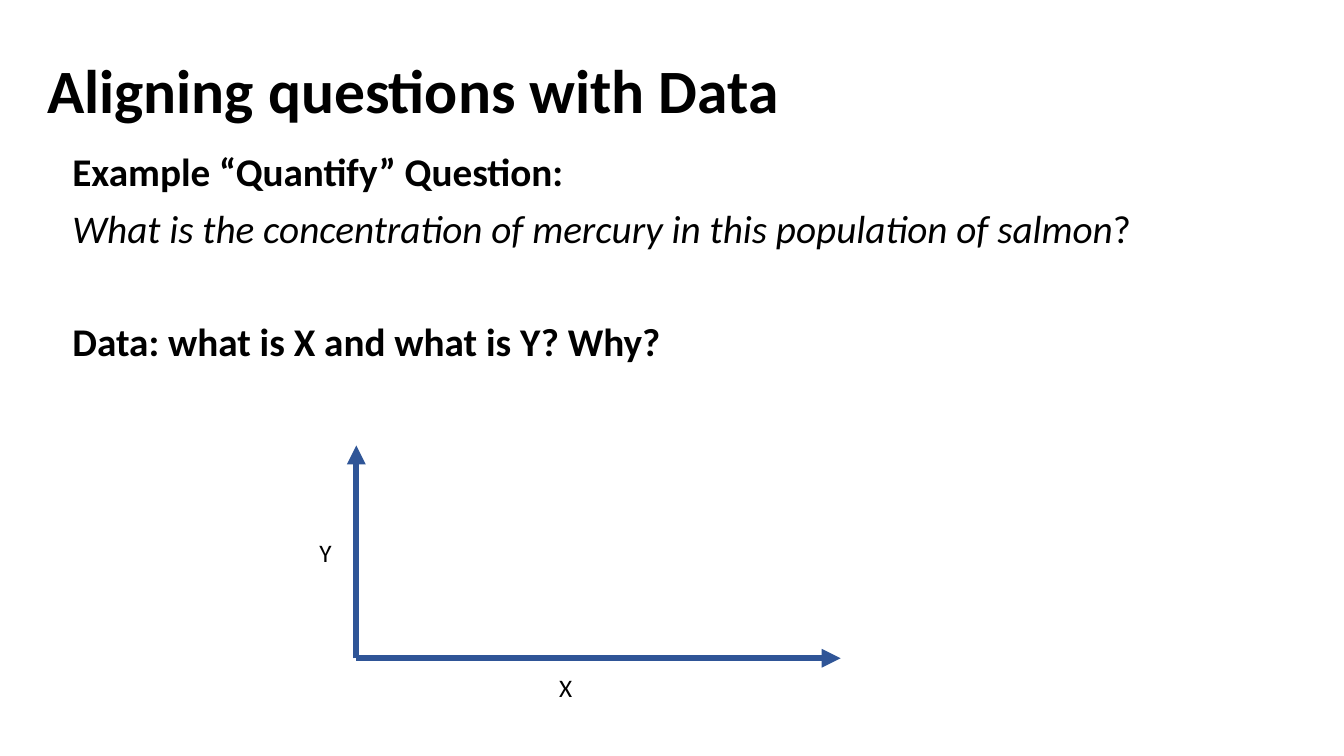
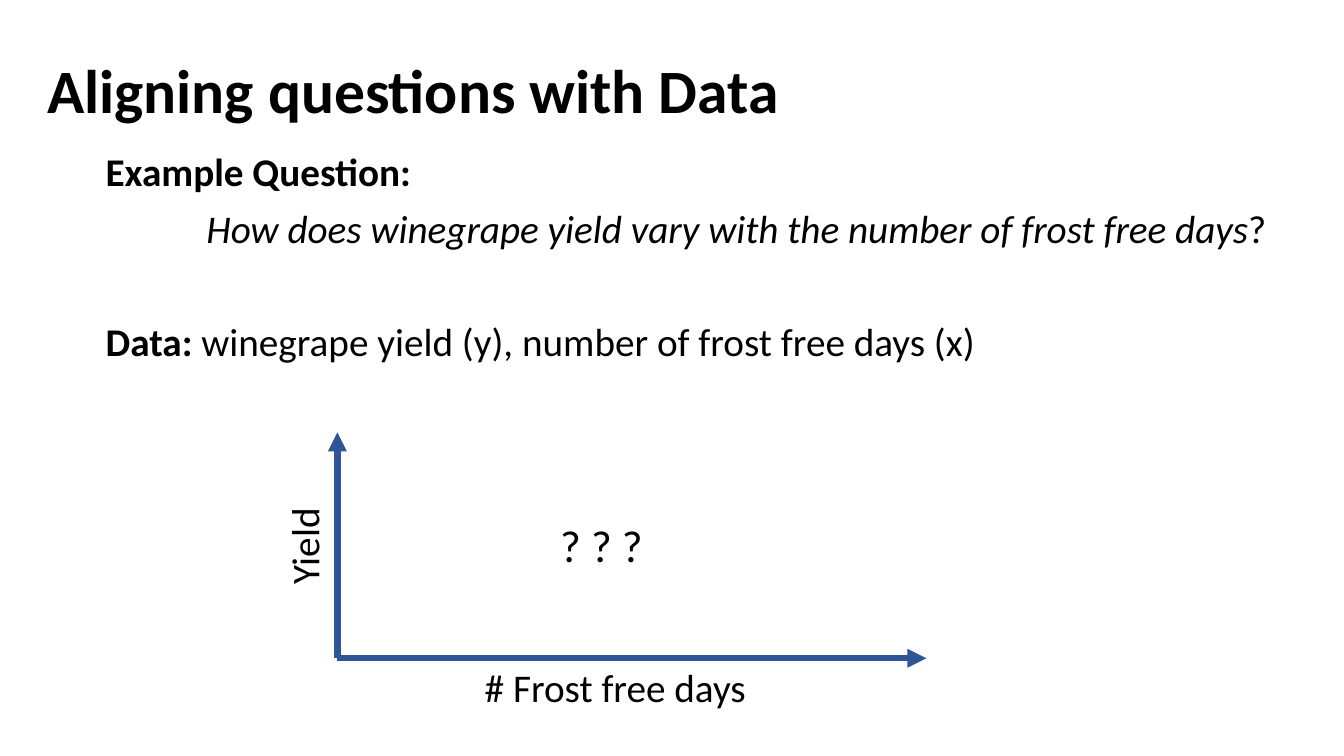
from dataclasses import dataclass

from lxml import etree
from pptx import Presentation
from pptx.dml.color import RGBColor
from pptx.enum.shapes import MSO_CONNECTOR
from pptx.enum.text import MSO_ANCHOR, MSO_AUTO_SIZE
from pptx.oxml.ns import qn
from pptx.presentation import Presentation as PresentationType
from pptx.slide import Slide
from pptx.util import Pt

STRAIGHT = MSO_CONNECTOR.STRAIGHT
TOP = MSO_ANCHOR.TOP
MIDDLE = MSO_ANCHOR.MIDDLE
FIT_SHAPE = MSO_AUTO_SIZE.SHAPE_TO_FIT_TEXT
NO_FIT = MSO_AUTO_SIZE.NONE

FONT = "Calibri"
BLACK = "000000"
AXIS_BLUE = "2F5597"
TITLE = "Aligning questions with Data"
BODY_SIZE = 28
LINE_GAP = 10
SECTION_GAP = 50.4
BLANK_LAYOUT = 6


@dataclass(frozen=True)
class Run:
    text: str
    bold: bool = False
    italic: bool = False


@dataclass(frozen=True)
class Line:
    runs: tuple[Run, ...]
    space_before: float = 0
    spacing: float = 1.0
    indent: float = 0


@dataclass(frozen=True)
class Box:
    left: float
    top: float
    width: float
    height: float


@dataclass(frozen=True)
class Label:
    text: str
    box: Box
    size: float
    rotation: float = 0


@dataclass(frozen=True)
class Axes:
    origin_x: float
    origin_y: float
    top: float
    right: float


@dataclass(frozen=True)
class QuestionSlide:
    body_box: Box
    heading: str
    question: str
    question_indent: float
    data_runs: tuple[Run, ...]
    axes: Axes
    labels: tuple[Label, ...]


TITLE_BOX = Box(26.64, 14.4, 828, 104.4)

QUESTION_SLIDES = (
    QuestionSlide(
        body_box=Box(44.64, 105.84, 875.5, 405.4),
        heading="Example “Quantify” Question:",
        question="What is the concentration of mercury in this population of salmon",
        question_indent=0,
        data_runs=(Run("Data: what is X and what is Y? Why?", bold=True),),
        axes=Axes(254.5, 470.2, 318.2, 600.5),
        labels=(
            Label("X", Box(392.4, 476.64, 23.76, 28.8), 18),
            Label("Y", Box(221.04, 380.16, 23.76, 28.8), 18),
        ),
    ),
    QuestionSlide(
        body_box=Box(68.4, 105.84, 852.5, 405.4),
        heading="Example Question:",
        question="How does winegrape yield vary with the number of frost free days",
        question_indent=72,
        data_runs=(
            Run("Data: ", bold=True),
            Run("winegrape yield (y), number of frost free days (x)"),
        ),
        axes=Axes(241, 470.2, 308.9, 661.7),
        labels=(
            Label("Yield", Box(182.16, 369.36, 69.84, 41.04), 28, 270),
            Label("# Frost free days", Box(339.12, 470.16, 203.04, 41.04), 28),
            Label("? ? ?", Box(393.12, 366.48, 74.16, 46.08), 32),
        ),
    ),
)


def colour(value: str) -> RGBColor:
    return RGBColor.from_string(value)


def add_text(
    slide: Slide,
    box: Box,
    lines: tuple[Line, ...],
    *,
    size: float,
    anchor: MSO_ANCHOR = TOP,
    wrap: bool = True,
    rotation: float = 0,
) -> None:
    shape = slide.shapes.add_textbox(
        Pt(box.left), Pt(box.top), Pt(box.width), Pt(box.height)
    )
    shape.rotation = rotation
    frame = shape.text_frame
    frame.word_wrap = wrap
    frame.auto_size = NO_FIT if wrap else FIT_SHAPE
    frame.vertical_anchor = anchor
    for index, line in enumerate(lines):
        paragraph = frame.add_paragraph() if index else frame.paragraphs[0]
        paragraph.space_before = Pt(line.space_before)
        paragraph.line_spacing = line.spacing
        if line.indent:
            paragraph._p.get_or_add_pPr().set("marL", str(Pt(line.indent)))
        for part in line.runs:
            run = paragraph.add_run()
            run.text = part.text
            run.font.name = FONT
            run.font.size = Pt(size)
            run.font.bold = part.bold
            run.font.italic = part.italic
            run.font.color.rgb = colour(BLACK)


def add_arrow(
    slide: Slide, start_x: float, start_y: float, end_x: float, end_y: float
) -> None:
    arrow = slide.shapes.add_connector(
        STRAIGHT, Pt(start_x), Pt(start_y), Pt(end_x), Pt(end_y)
    )
    arrow.line.color.rgb = colour(AXIS_BLUE)
    arrow.line.width = Pt(4.5)
    properties = arrow._element.spPr
    outline = properties.find(qn("a:ln"))
    etree.SubElement(outline, qn("a:tailEnd"), type="triangle")
    etree.SubElement(properties, qn("a:effectLst"))


def add_axes(slide: Slide, axes: Axes) -> None:
    add_arrow(slide, axes.origin_x, axes.origin_y, axes.origin_x, axes.top)
    add_arrow(slide, axes.origin_x, axes.origin_y, axes.right, axes.origin_y)


def add_question_slide(presentation: PresentationType, content: QuestionSlide) -> None:
    slide = presentation.slides.add_slide(presentation.slide_layouts[BLANK_LAYOUT])
    title = Line((Run(TITLE, bold=True),), spacing=0.9)
    add_text(slide, TITLE_BOX, (title,), size=44, anchor=MIDDLE)
    question_runs = (Run(content.question, italic=True), Run("?"))
    body = (
        Line((Run(content.heading, bold=True),), LINE_GAP, 0.9),
        Line(question_runs, LINE_GAP, 0.9, content.question_indent),
        Line(content.data_runs, SECTION_GAP, 0.9),
    )
    add_text(slide, content.body_box, body, size=BODY_SIZE)
    add_axes(slide, content.axes)
    for label in content.labels:
        add_text(
            slide,
            label.box,
            (Line((Run(label.text),)),),
            size=label.size,
            wrap=False,
            rotation=label.rotation,
        )


def main() -> None:
    presentation = Presentation()
    presentation.slide_width = Pt(960)
    presentation.slide_height = Pt(540)
    for content in QUESTION_SLIDES:
        add_question_slide(presentation, content)
    presentation.save("out.pptx")


if __name__ == "__main__":
    main()
